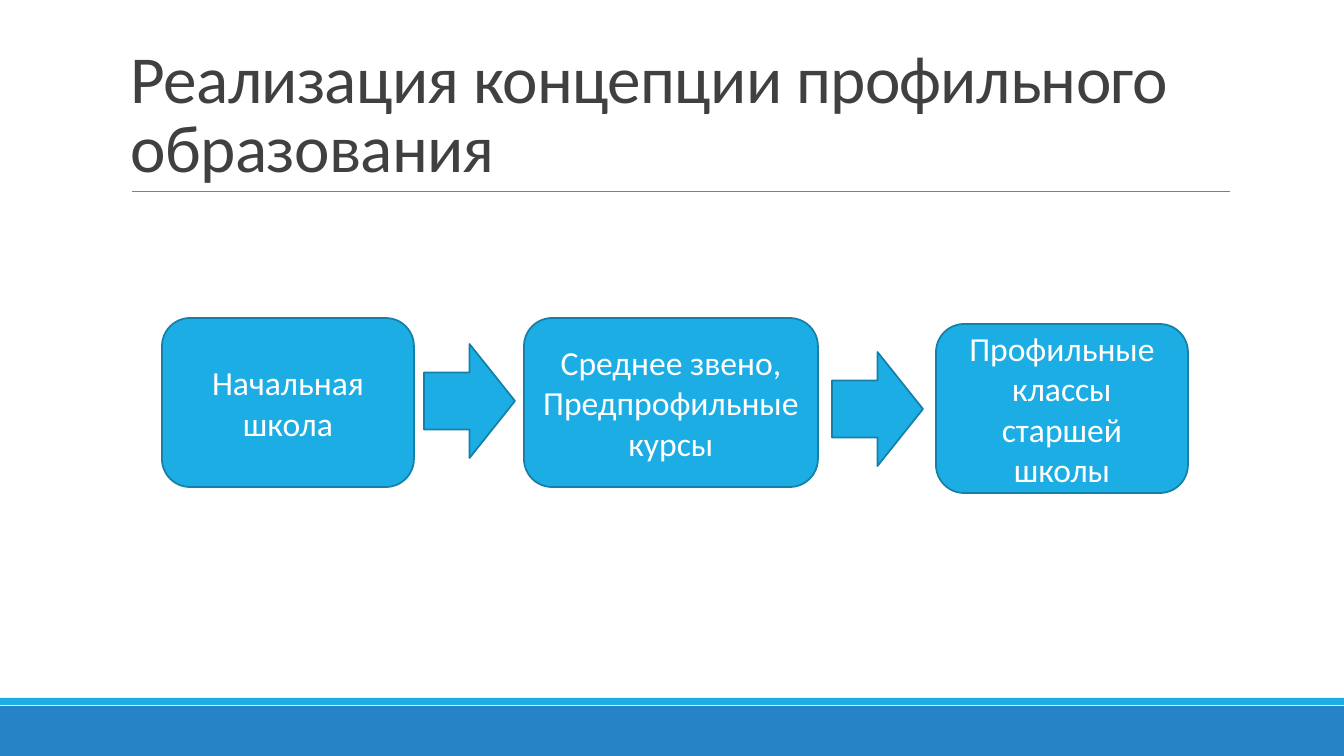
from dataclasses import dataclass

from pptx import Presentation
from pptx.dml.color import RGBColor as Rgb
from pptx.enum.shapes import MSO_CONNECTOR as Wire, MSO_SHAPE as Form
from pptx.enum.text import MSO_ANCHOR as Anchor, PP_ALIGN as Align
from pptx.oxml.ns import qn
from pptx.util import Pt
from lxml.etree import SubElement

SCALE = 12192000 / 1344


@dataclass(frozen=True)
class Theme:
    font: str = "Calibri"
    sky: str = "1CADE4"
    blue: str = "2683C6"
    edge: str = "1580A9"
    rule: str = "808080"
    ink: str = "404040"
    white: str = "FFFFFF"
    head: int = 48
    body: int = 24


class Deck:
    """Draws styled elements on one slide, with lengths in px."""

    def __init__(self, theme):
        self.theme = theme
        self.prs = Presentation()
        self.prs.slide_width, self.prs.slide_height = self.emu(1344, 756)
        self.slide = self.prs.slides.add_slide(self.prs.slide_layouts[6])
        self.shapes = self.slide.shapes

    def emu(self, *sizes):
        return [round(size * SCALE) for size in sizes]

    def style(self, para, size, color):
        para.font.name = self.theme.font
        para.font.size = Pt(size)
        para.font.color.rgb = Rgb.from_string(color)

    def shape(self, form, at, fill, edge=None):
        item = self.shapes.add_shape(form, *self.emu(*at))
        item.shadow.inherit = False
        item.fill.solid()
        item.fill.fore_color.rgb = Rgb.from_string(fill)
        if edge:
            item.line.color.rgb = Rgb.from_string(edge)
            item.line.width = Pt(1.25)
        else:
            item.line.fill.background()
        return item

    def band(self, top, high, fill):
        self.shape(Form.RECTANGLE, (0, top, 1344, high), fill)

    def rule(self, left, right, top):
        line = self.shapes.add_connector(Wire.STRAIGHT, *self.emu(left, top, right, top))
        line.line.color.rgb = Rgb.from_string(self.theme.rule)
        line.line.width = Pt(0.5)
        SubElement(line._element.spPr, qn("a:effectLst"))

    def title(self, at, text):
        frame = self.shapes.add_textbox(*self.emu(*at)).text_frame
        frame.word_wrap = True
        frame.vertical_anchor = Anchor.BOTTOM
        para = frame.paragraphs[0]
        run = para.add_run()
        run.text = text
        run._r.get_or_add_rPr().set("spc", "-50")
        para.line_spacing = 0.85
        self.style(para, self.theme.head, self.theme.ink)

    def stage(self, left, top, wide, text):
        box = self.shape(Form.ROUNDED_RECTANGLE, (left, top, wide, 169),
                         self.theme.sky, self.theme.edge)
        frame = box.text_frame
        frame.text = text
        frame.word_wrap = True
        frame.vertical_anchor = Anchor.MIDDLE
        for para in frame.paragraphs:
            para.alignment = Align.CENTER
            self.style(para, self.theme.body, self.theme.white)

    def arrow(self, left, top):
        self.shape(Form.RIGHT_ARROW, (left, top, 91, 114),
                   self.theme.sky, self.theme.edge)

    def save(self):
        self.prs.save("out.pptx")


def main():
    theme = Theme()
    deck = Deck(theme)
    deck.band(706, 50, theme.blue)
    deck.band(698, 7, theme.sky)
    deck.rule(132, 1230, 191)
    deck.title((121, 31, 1109, 160), "Реализация концепции профильного образования")
    stages = [
        (162, 318, 252, "Начальная школа"),
        (524, 318, 294, "Среднее звено,\nПредпрофильные курсы"),
        (936, 324, 252, "Профильные классы старшей школы"),
    ]
    for stage in stages:
        deck.stage(*stage)
    for left, top in [(424, 344), (832, 352)]:
        deck.arrow(left, top)
    deck.save()


if __name__ == "__main__":
    main()
